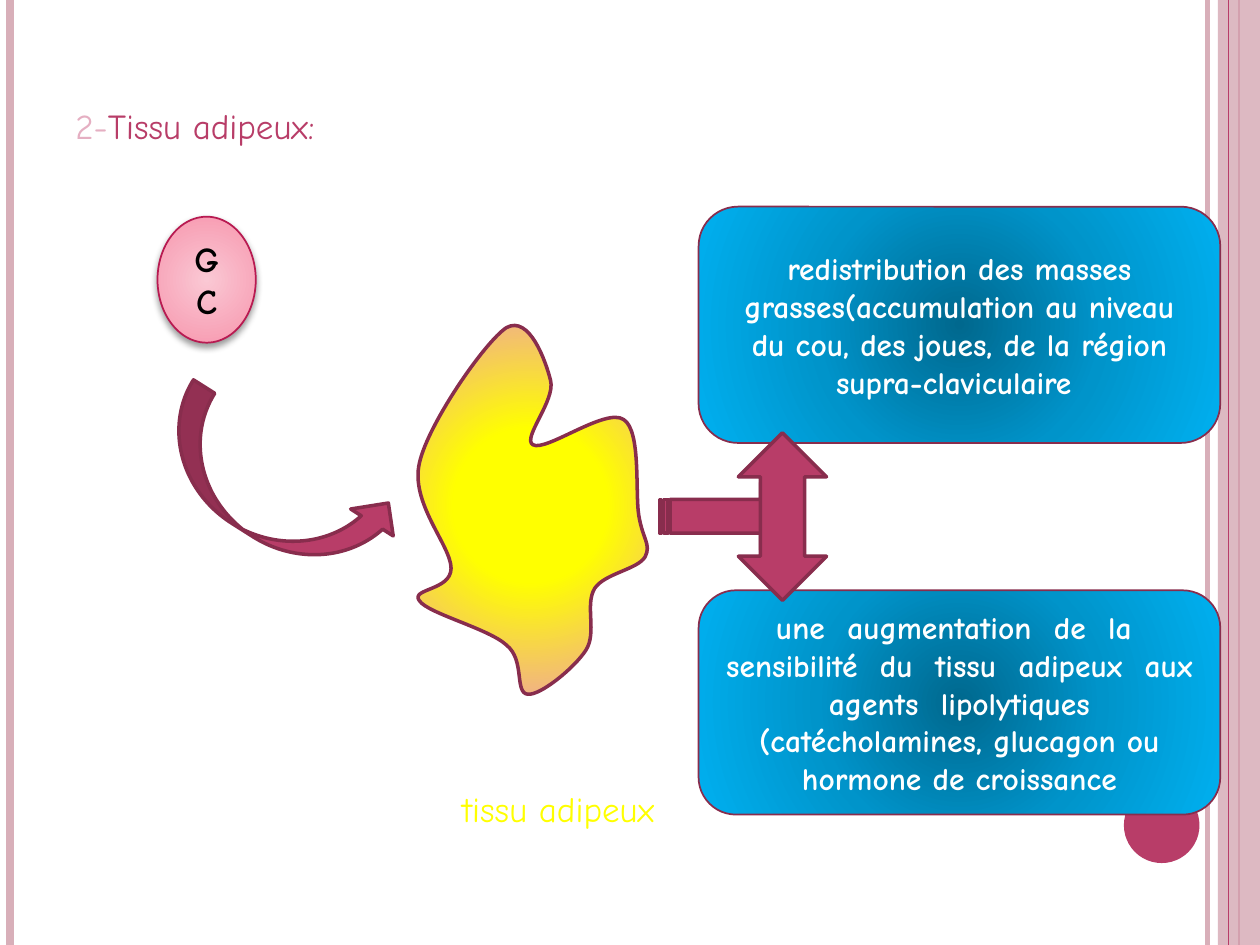
from lxml import etree
from pptx import Presentation
from pptx import util as u
from pptx.dml.color import RGBColor
from pptx.enum import shapes, text
from pptx.oxml import ns, parse_xml

FONT = "Comic Neue"
PINK = RGBColor(0xD8, 0xAF, 0xB9)
PALE = RGBColor(0xE5, 0xAF, 0xC2)
ROSE = RGBColor(0xB8, 0x3D, 0x68)
DARK = RGBColor(0x88, 0x2D, 0x4D)
CRIMSON = RGBColor(0xB8, 0x1A, 0x51)
YELLOW = RGBColor(0xFF, 0xFF, 0x00)
WHITE = RGBColor(0xFF, 0xFF, 0xFF)
BLACK = RGBColor(0, 0, 0)
BLUES = [(0, RGBColor(0x00, 0x68, 0x8E)), (50, RGBColor(0x00, 0x94, 0xCA)),
         (100, RGBColor(0x00, 0xB0, 0xF0))]
FAT = [(0, YELLOW), (34, YELLOW), (100, RGBColor(0xEC, 0x9B, 0xAE))]
PINKS = [(0, RGBColor(0xFA, 0xC8, 0xD4)), (100, RGBColor(0xF7, 0x94, 0xAC))]
MSO = shapes.MSO_SHAPE

prs = Presentation()
prs.slide_width, prs.slide_height = u.Inches(10), u.Inches(7.5)
s = prs.slides.add_slide(prs.slide_layouts[6])

# Square grid: 100 columns by 75 rows
COL = prs.slide_width / 100
ROW = prs.slide_height / 75


def style(sp, fill, line=DARK, width=2):
    """Solid colour or list of radial gradient stops, plus an outline."""
    sp.shadow.inherit = False
    if isinstance(fill, list):
        sp.fill.gradient()
        grad = sp._element.spPr.find(ns.qn("a:gradFill"))
        stops = "".join(f'<a:gs pos="{pos * 1000}"><a:srgbClr val="{c}"/></a:gs>'
                        for pos, c in fill)
        radial = parse_xml(
            f'<a:gradFill {ns.nsdecls("a")} rotWithShape="1"><a:gsLst>{stops}</a:gsLst>'
            '<a:path path="circle"><a:fillToRect l="50000" t="50000" r="50000" b="50000"/>'
            '</a:path></a:gradFill>')
        grad.getparent().replace(grad, radial)
    else:
        sp.fill.solid()
        sp.fill.fore_color.rgb = fill
    if line is None:
        sp.line.fill.background()
    else:
        sp.line.color.rgb = line
        sp.line.width = u.Pt(width)


def add(kind, x, y, w, h):
    return s.shapes.add_shape(kind, round(x * COL), round(y * ROW),
                              round(w * COL), round(h * ROW))


# Vertical rules, with the translucent band above the first three
for x, color, width in [(95.83, PINK, 3), (0.83, PINK, 4.5), (98.33, ROSE, 1.5),
                        (97.5, ROSE, 0.75)]:
    if x == 97.5:
        band = add(MSO.RECTANGLE, 96.67, 0, 3.33, 75)
        style(band, PINK, None)
        clr = band._element.spPr.find(ns.qn("a:solidFill"))[0]
        etree.SubElement(clr, ns.qn("a:alpha"), val="87000")
    x = round(x * COL)
    cx = s.shapes.add_connector(shapes.MSO_CONNECTOR.STRAIGHT, x, 0, x, prs.slide_height)
    cx.line.color.rgb = color
    cx.line.width = u.Pt(width)
    etree.SubElement(cx._element.spPr, ns.qn("a:effectLst"))
style(add(MSO.OVAL, 89.2, 62.5, 6, 6), ROSE, None)

# Heading and, lower down, the tissue label
tf = s.shapes.add_textbox(round(5 * COL), round(7.8 * ROW),
                          round(90 * COL), round(62.8 * ROW)).text_frame
tf.word_wrap = True
heading, label = tf.paragraphs[0], tf.add_paragraph()
label.space_before = u.Pt(366)
label._p.get_or_add_pPr().set("marL", str(round(30.7 * COL)))
for p, runs in [(heading, [("2-", PALE), ("Tissu adipeux:", ROSE)]),
                (label, [("tissu adipeux", YELLOW)])]:
    p.font.name, p.font.size = FONT, u.Pt(20)
    for words, color in runs:
        r = p.add_run()
        r.text = words
        r.font.color.rgb = color

# Adipose tissue: closed curve of cubic segments (two controls, end point)
START = (40.2, 26)
CURVES = [
    [(38.5, 27.1), (34, 33.6), (33.3, 36.7)],
    [(32.5, 39.9), (35.8, 43.3), (35.8, 45.1)],
    [(35.8, 46.9), (32.5, 46.7), (33.3, 47.7)],
    [(34, 48.7), (38.8, 49.9), (40.2, 51.2)],
    [(41.7, 52.4), (40.8, 55), (41.9, 55.1)],
    [(42.9, 55.2), (45.6, 53), (46.5, 51.6)],
    [(47.4, 50.2), (46.4, 48), (47.2, 46.7)],
    [(48, 45.5), (50.6, 45.2), (51.2, 44.2)],
    [(51.7, 43.2), (51, 42.8), (50.7, 40.9)],
    [(50.4, 39.1), (50.9, 34.2), (49.5, 33.3)],
    [(48.1, 32.3), (43.3, 35.9), (42.3, 35.3)],
    [(41.4, 34.8), (44.1, 31.8), (43.7, 30.2)],
    [(43.3, 28.6), (42, 25), START],
]
fb = s.shapes.build_freeform(START[0] * COL, START[1] * ROW)
fb.add_line_segments([(x * COL, y * ROW) for curve in CURVES for x, y in curve], close=True)
tissue = fb.convert_to_shape()
# Turn each three straight segments into one cubic segment
lines = list(tissue._element.iter(ns.qn("a:lnTo")))
for i in range(0, 3 * len(CURVES), 3):
    cubic = etree.Element(ns.qn("a:cubicBezTo"))
    lines[i].addprevious(cubic)
    for ln in lines[i:i + 3]:
        cubic.append(ln[0])
for ln in lines:
    ln.getparent().remove(ln)
style(tissue, FAT)

# Arrow leaving the tissue
style(add(MSO.STRIPED_RIGHT_ARROW, 52.35, 38.3, 10.7, 5.35), ROSE)

# Hormone bubble
bubble = add(MSO.OVAL, 12.5, 17.2, 7.8, 10)
style(bubble, PINKS, CRIMSON, 1)
bubble._element.spPr.find(ns.qn("a:effectLst")).append(parse_xml(
    f'<a:outerShdw {ns.nsdecls("a")} blurRad="{u.Pt(4)}" dist="{u.Pt(2)}" dir="5400000" '
    'rotWithShape="0"><a:srgbClr val="000000"><a:alpha val="40000"/></a:srgbClr>'
    '</a:outerShdw>'))

# Curved arrow into the tissue
curved = add(MSO.CURVED_RIGHT_ARROW, 17.8, 28.8, 8, 20.3)
curved.rotation = 302.3
style(curved, ROSE)

# The two effects
effects = [add(MSO.ROUNDED_RECTANGLE, 55.45, y, 41.4, h) for y, h in [(16.4, 18.75), (46.85, 17.8)]]
for sp in effects:
    style(sp, BLUES, DARK, 1)

# Words inside the shapes
for sp, size, color, words in [
    (bubble, 20, BLACK, "GC"),
    (effects[0], 18, WHITE,
     "redistribution des masses grasses(accumulation au niveau du cou, des joues, "
     "de la région supra-claviculaire "),
    (effects[1], 18, WHITE,
     "une  augmentation  de  la  sensibilité  du  tissu  adipeux  aux agents  lipolytiques "
     "(catécholamines, glucagon ou hormone de croissance"),
]:
    tf = sp.text_frame
    tf.word_wrap = True
    tf.vertical_anchor = text.MSO_ANCHOR.MIDDLE
    p = tf.paragraphs[0]
    p.text = words
    p.alignment = text.PP_ALIGN.CENTER
    p.font.name, p.font.size, p.font.bold = FONT, u.Pt(size), True
    p.font.color.rgb = color

# Double arrow between the effects
double = add(MSO.LEFT_RIGHT_ARROW, 55.45, 37.5, 13.3, 7)
double.rotation = 90
style(double, ROSE)

prs.save("out.pptx")
